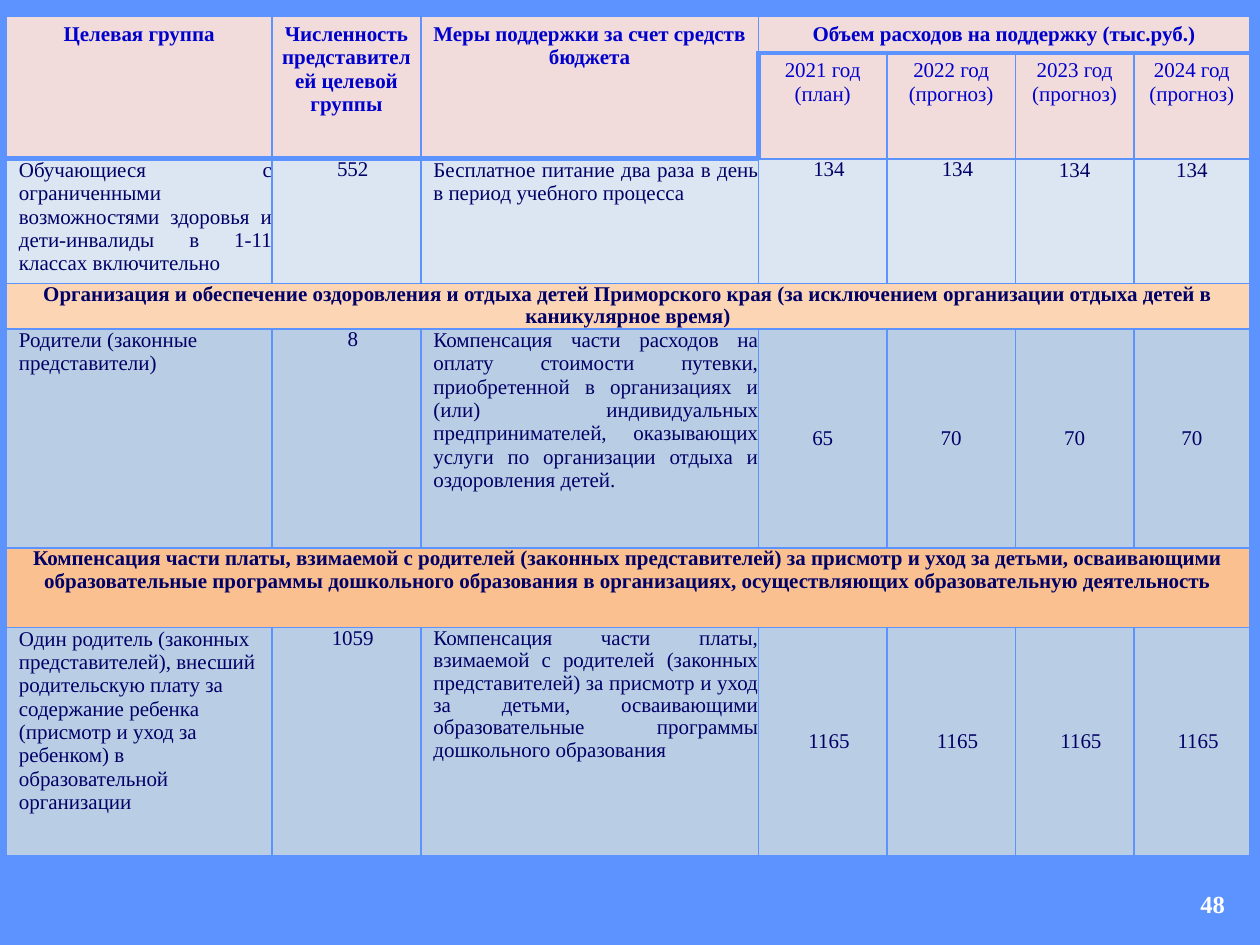
"""Build the slide with the table of support measures for target groups."""
from lxml import etree
from pptx import Presentation
from pptx import util as u
from pptx.dml.color import RGBColor
from pptx.enum import text
from pptx.oxml import ns

COLORS = {
    "background": "5D93FF", "header": "F2DCDB", "light": "DCE6F2",
    "blue": "B9CDE5", "peach": "FCD5B5", "orange": "FAC090",
    "header_text": "0000CC", "body_text": "000066", "number": "FFFFFF",
}
FONT = "Times New Roman"
ALIGNMENTS = {
    "l": text.PP_ALIGN.LEFT, "c": text.PP_ALIGN.CENTER,
    "j": text.PP_ALIGN.JUSTIFY, "r": text.PP_ALIGN.RIGHT,
}
COLUMN_WIDTHS = [2.11, 1.18, 2.68, 1.02, 1.02, 0.94, 0.92]
ROW_HEIGHTS = [0.29, 0.44, 0.99, 0.36, 1.74, 0.63, 1.81]
ROW_FILLS = ["header", "header", "light", "peach", "blue", "orange", "blue"]
MERGES = [(0, 0, 1, 0), (0, 1, 1, 1), (0, 2, 1, 2), (0, 3, 0, 6), (3, 0, 3, 6), (5, 0, 5, 6)]
THICK_EDGES = {(1, 3, "L")}
THICK_EDGES |= {(row, column, "B") for row in (0, 1) for column in range(3)}
THICK_EDGES |= {(2, column, "T") for column in range(3)}
THICK_EDGES |= {(0, column, "B") for column in range(3, 7)}
THICK_EDGES |= {(1, column, "T") for column in range(3, 7)}

# Each style lists alignment, i = indent, e = exact line spacing, m = middle anchor
ROWS = [
    [("Целевая группа", "c"), ("Численность представителей целевой группы", "c"),
     ("Меры поддержки за счет средств бюджета", "c"),
     ("Объем расходов на поддержку (тыс.руб.)", "c")],
    [None, None, None, ("2021 год (план)", "c"), ("2022 год (прогноз)", "c"),
     ("2023 год\n(прогноз)", "c"), ("2024 год\n(прогноз)", "c")],
    [("Обучающиеся с ограниченными возможностями здоровья и дети-инвалиды "
      "в 1-11 классах включительно", "ji"),
     ("552", "cie"),
     ("Бесплатное питание два раза в день в период учебного процесса", "ji"),
     ("134", "cie"), ("134", "cie"), ("134", "c"), ("134", "c")],
    [("Организация и обеспечение оздоровления и отдыха детей Приморского края "
      "(за исключением организации отдыха детей в каникулярное время)", "ce")],
    [("Родители (законные представители)", "li"), ("8", "cie"),
     ("Компенсация части расходов на оплату стоимости путевки, приобретенной "
      "в организациях и (или) индивидуальных предпринимателей, оказывающих "
      "услуги по организации отдыха и оздоровления детей.", "ji"),
     ("65", "cm"), *[("70", "cm")] * 3],
    [("Компенсация части платы, взимаемой с родителей (законных представителей) "
      "за присмотр и уход за детьми, осваивающими образовательные программы "
      "дошкольного образования в организациях, осуществляющих образовательную "
      "деятельность", "ce")],
    [("Один родитель (законных представителей), внесший родительскую плату за "
      "содержание ребенка (присмотр и уход за ребенком) в образовательной "
      "организации", "li"),
     ("1059", "cie"),
     ("Компенсация части платы, взимаемой с родителей (законных представителей) "
      "за присмотр и уход за детьми, осваивающими образовательные программы "
      "дошкольного образования", "jie"),
     *[("1165", "ciem")] * 4],
]


def write_text(frame, content, style, size, color, bold):
    frame.text = content
    for paragraph in frame.paragraphs:
        paragraph.alignment = ALIGNMENTS[style[0]]
        if "i" in style:
            properties = paragraph._p.get_or_add_pPr()
            properties.set("marL", str(u.Inches(0.1)))
            properties.set("indent", "0")
        if "e" in style:
            paragraph.line_spacing = u.Pt(12.8)
        for run in paragraph.runs:
            run.font.name = FONT
            run.font.size = u.Pt(size)
            run.font.bold = bold
            run.font.color.rgb = RGBColor.from_string(COLORS[color])


def set_borders(cell, row, column):
    properties = cell._tc.get_or_add_tcPr()
    for position, side in enumerate("LRTB"):
        points = 3 if (row, column, side) in THICK_EDGES else 1
        line = etree.Element(ns.qn(f"a:ln{side}"), w=str(u.Pt(points)))
        fill = etree.SubElement(line, ns.qn("a:solidFill"))
        etree.SubElement(fill, ns.qn("a:srgbClr"), val=COLORS["background"])
        properties.insert(position, line)


presentation = Presentation()
presentation.slide_width = u.Inches(10)
presentation.slide_height = u.Inches(7.5)
slide = presentation.slides.add_slide(presentation.slide_layouts[6])
slide.background.fill.solid()
slide.background.fill.fore_color.rgb = RGBColor.from_string(COLORS["background"])

table = slide.shapes.add_table(
    len(ROW_HEIGHTS), len(COLUMN_WIDTHS),
    u.Inches(0.05), u.Inches(0.13), u.Inches(9.89), u.Inches(6.62),
).table
for column, width in zip(table.columns, COLUMN_WIDTHS):
    column.width = u.Inches(width)
for row, height in zip(table.rows, ROW_HEIGHTS):
    row.height = u.Inches(height)
for top, left, bottom, right in MERGES:
    table.cell(top, left).merge(table.cell(bottom, right))

for row, fill_name in enumerate(ROW_FILLS):
    is_header = fill_name == "header"
    for column in range(len(COLUMN_WIDTHS)):
        cell = table.cell(row, column)
        cell.fill.solid()
        cell.fill.fore_color.rgb = RGBColor.from_string(COLORS[fill_name])
        cell.margin_left = cell.margin_right = u.Inches(0.07 if is_header else 0)
        cell.margin_top = cell.margin_bottom = u.Inches(0.05 if is_header else 0)
        set_borders(cell, row, column)
    for column, entry in enumerate(ROWS[row]):
        if entry:
            content, style = entry
            cell = table.cell(row, column)
            middle = "m" in style
            cell.vertical_anchor = text.MSO_ANCHOR.MIDDLE if middle else text.MSO_ANCHOR.TOP
            write_text(cell.text_frame, content, style, 12,
                       "header_text" if is_header else "body_text",
                       row == 0 or len(ROWS[row]) == 1)

page_number = slide.shapes.add_textbox(
    u.Inches(9.38), u.Inches(7.03), u.Inches(0.44), u.Inches(0.31))
page_number.text_frame.word_wrap = True
page_number.text_frame.vertical_anchor = text.MSO_ANCHOR.BOTTOM
write_text(page_number.text_frame, "48", "r", 14, "number", True)

presentation.save("out.pptx")
